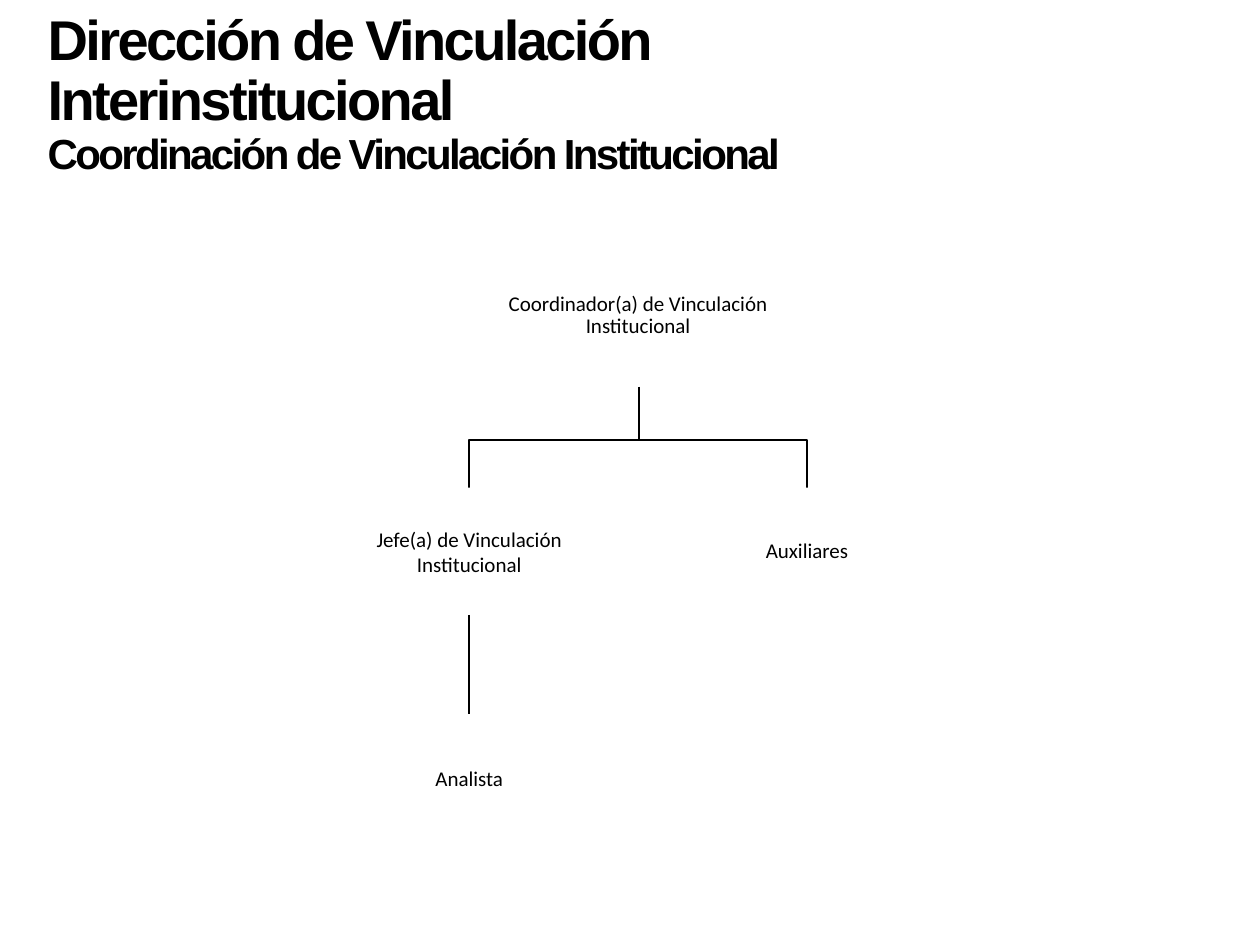
"""Builds the organisation chart slide of the institutional liaison office."""
import pptx
import pptx.dml.color
import pptx.enum.shapes
import pptx.enum.text
import pptx.oxml.ns
import pptx.util
import lxml.etree

Inches = pptx.util.Inches
Pt = pptx.util.Pt
ALIGN = pptx.enum.text.PP_ALIGN
BLACK, WHITE = "000000", "FFFFFF"
WIDE, HIGH = 1.93, 1.01
LEFT, RIGHT = 2.76, 5.44
ROW, LAST = 3.87, 5.67
INSET = Inches(0.01)
BODY = {"name": "Calibri", "size": Pt(12)}
HEAD = {"name": "Arial", "bold": True}
FRAME = {"word_wrap": True, "vertical_anchor": pptx.enum.text.MSO_ANCHOR.MIDDLE}
TIGHT = {"margin_left": INSET, "margin_right": INSET,
         "margin_top": INSET, "margin_bottom": INSET}


def color(code):
    """Turn a hex string into a colour."""
    return pptx.dml.color.RGBColor.from_string(code)


def apply(item, values):
    """Set each attribute of the item from a dict."""
    for name, value in values.items():
        setattr(item, name, value)


def style(font, values):
    """Give a font its format and black colour."""
    apply(font, values)
    font.color.rgb = color(BLACK)


def ink(line):
    """Draw a line thin and black."""
    line.color.rgb = color(BLACK)
    line.width = Pt(1)


def label(shape, text, space=None):
    """Write centred text into a shape."""
    frame = shape.text_frame
    apply(frame, {**FRAME, **TIGHT})
    par = frame.paragraphs[0]
    apply(par, {"alignment": ALIGN.CENTER, "line_spacing": space})
    run = par.add_run()
    run.text = text
    style(run.font, BODY)


def box(slide, x, y, text, space=None):
    """Add a white box for one post."""
    shape = slide.shapes.add_shape(
        pptx.enum.shapes.MSO_SHAPE.RECTANGLE,
        Inches(x), Inches(y), Inches(WIDE), Inches(HIGH))
    shape.shadow.inherit = False
    shape.fill.solid()
    shape.fill.fore_color.rgb = color(WHITE)
    shape.line.fill.background()
    label(shape, text, space)
    return shape


def branch(slide, x, y, left):
    """Draw a bent line from the top post down to a box."""
    mid, bend = left + WIDE / 2, y + 0.42
    build = slide.shapes.build_freeform(Inches(x), Inches(y))
    points = [(x, bend), (mid, bend), (mid, ROW)]
    build.add_line_segments([(Inches(a), Inches(b)) for a, b in points], close=False)
    shape = build.convert_to_shape()
    shape.shadow.inherit = False
    shape.fill.background()
    ink(shape.line)


def link(slide, upper, lower):
    """Join the bottom of one box to the top of another."""
    line = slide.shapes.add_connector(
        pptx.enum.shapes.MSO_CONNECTOR.STRAIGHT, 0, 0, 0, 0)
    line.begin_connect(upper, 2)
    line.end_connect(lower, 0)
    ink(line.line)
    props = line.element.spPr
    lxml.etree.SubElement(props, pptx.oxml.ns.qn("a:effectLst"))


def title(slide, lines):
    """Add the heading with its smaller second line."""
    shape = slide.shapes.add_textbox(
        Inches(0.28), Inches(0.04), Inches(7.53), Inches(1.43))
    apply(shape.text_frame, FRAME)
    par = shape.text_frame.paragraphs[0]
    par.line_spacing = 0.9
    for place, (text, size) in enumerate(lines):
        if place:
            par.add_line_break()
        run = par.add_run()
        run.text = text
        style(run.font, {**HEAD, "size": Pt(size)})
        run.font._element.set("spc", "-150")


def main():
    """Build and save the slide."""
    deck = pptx.Presentation()
    apply(deck, {"slide_width": Inches(10), "slide_height": Inches(7.5)})
    slide = deck.slides.add_slide(deck.slide_layouts[6])
    for left in (RIGHT, LEFT):
        branch(slide, 5.07, 3.07, left)
    top = slide.shapes.add_textbox(
        Inches(3.85), Inches(1.94), Inches(2.43), Inches(1.13))
    label(top, "Coordinador(a) de Vinculación Institucional", 0.9)
    chief = box(slide, LEFT, ROW, "Jefe(a) de Vinculación Institucional")
    staff = box(slide, LEFT, LAST, "Analista")
    box(slide, RIGHT, ROW, "Auxiliares", 0.9)
    link(slide, chief, staff)
    title(slide, [("Dirección de Vinculación Interinstitucional", 32),
                  ("Coordinación de Vinculación Institucional", 24)])
    deck.save("out.pptx")


if __name__ == "__main__":
    main()
